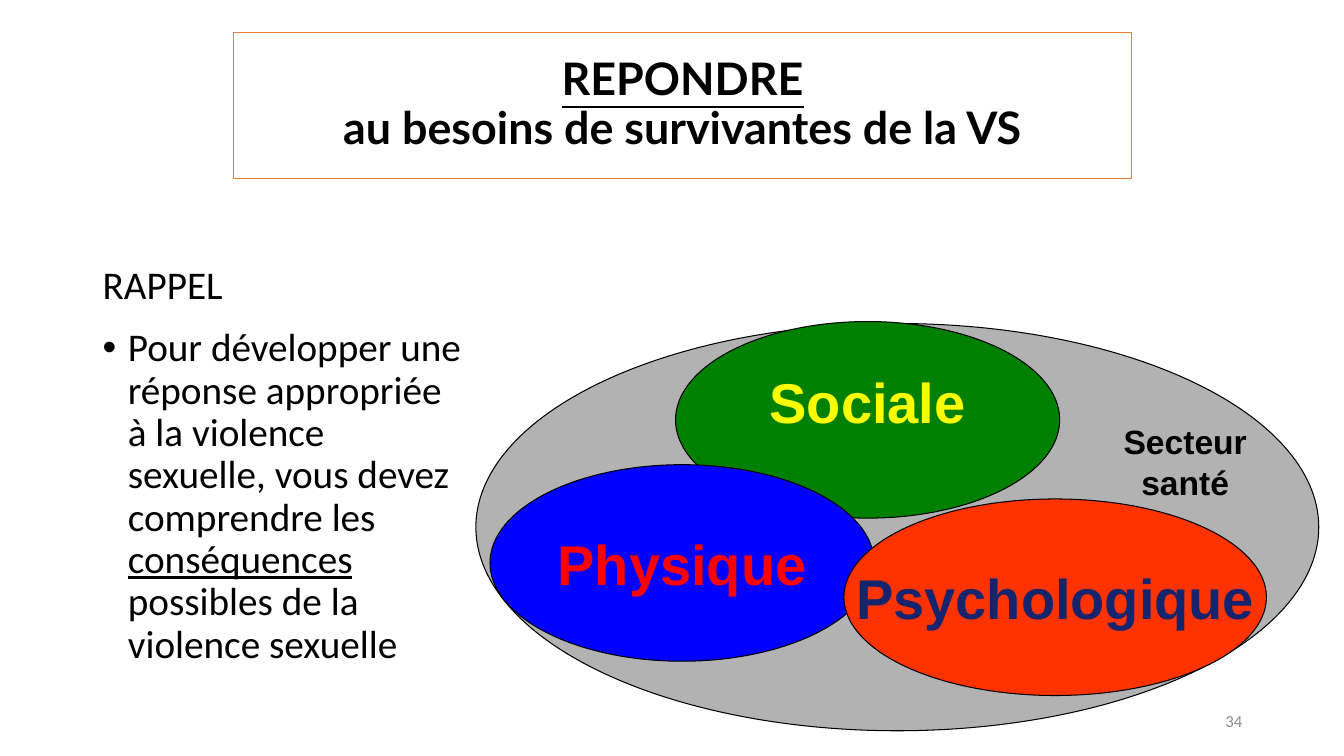
from copy import deepcopy
from dataclasses import dataclass

from lxml.etree import SubElement
from pptx import Presentation
from pptx.dml.color import RGBColor
from pptx.enum.shapes import MSO_SHAPE
from pptx.enum.text import MSO_ANCHOR, MSO_AUTO_SIZE, PP_ALIGN
from pptx.oxml.ns import qn
from pptx.shapes.autoshape import Shape
from pptx.slide import Slide
from pptx.text.text import TextFrame, _Paragraph
from pptx.util import Inches, Pt

COLORS = {
    "black": "000000",
    "orange": "ED7D31",
    "gray": "B2B2B2",
    "green": "008000",
    "yellow": "FFFF00",
    "blue": "0000FF",
    "red": "FF0000",
    "vermilion": "FF3300",
    "navy": "16246D",
    "page gray": "8C8C8C",
}


@dataclass
class Run:
    text: str
    underline: bool = False
    break_after: bool = False


@dataclass
class Need:
    label: str
    left: float
    top: float
    width: float
    fill: str
    color: str
    bottom_margin: float = 0.05


NEEDS = [
    Need("Sociale", 6.7, 3.19, 3.81, "green", "yellow", bottom_margin=0.43),
    Need("Physique", 4.86, 4.61, 3.81, "blue", "red"),
    Need("Psychologique", 8.37, 4.95, 4.19, "vermilion", "navy"),
]
NEED_HEIGHT = 1.95


def rgb(name: str) -> RGBColor:
    return RGBColor.from_string(COLORS[name])


def write(paragraph: _Paragraph, *runs: Run, size: float, font: str = "Calibri",
          color: str = "black", bold: bool = False, align: PP_ALIGN = PP_ALIGN.LEFT,
          line_spacing: float = 1.0, space_before: float = 0) -> None:
    paragraph.alignment = align
    paragraph.line_spacing = line_spacing
    paragraph.space_before = Pt(space_before)
    for part in runs:
        run = paragraph.add_run()
        run.text = part.text
        run.font.name = font
        run.font.size = Pt(size)
        run.font.bold = bold
        run.font.underline = part.underline
        run.font.color.rgb = rgb(color)
        if part.break_after:
            line_break = SubElement(paragraph._p, qn("a:br"))
            line_break.append(deepcopy(run._r.rPr))


def add_bullet(paragraph: _Paragraph, indent: float) -> None:
    properties = paragraph._p.get_or_add_pPr()
    properties.set("marL", str(Inches(indent)))
    properties.set("indent", str(-Inches(indent)))
    SubElement(properties, qn("a:buFont")).set("typeface", "Arial")
    SubElement(properties, qn("a:buChar")).set("char", "•")


def add_text_box(slide: Slide, left: float, top: float, width: float, height: float,
                 anchor: MSO_ANCHOR = MSO_ANCHOR.TOP) -> TextFrame:
    box = slide.shapes.add_textbox(Inches(left), Inches(top), Inches(width), Inches(height))
    box.text_frame.word_wrap = True
    box.text_frame.vertical_anchor = anchor
    return box.text_frame


def add_ellipse(slide: Slide, left: float, top: float, width: float, height: float,
                fill: str) -> Shape:
    ellipse = slide.shapes.add_shape(
        MSO_SHAPE.OVAL, Inches(left), Inches(top), Inches(width), Inches(height))
    ellipse.shadow.inherit = False
    ellipse.fill.solid()
    ellipse.fill.fore_color.rgb = rgb(fill)
    ellipse.line.color.rgb = rgb("black")
    ellipse.line.width = Pt(0.75)
    return ellipse


def add_title(slide: Slide) -> None:
    title = slide.shapes.title
    title.left, title.top = Inches(2.32), Inches(0.32)
    title.width, title.height = Inches(8.9), Inches(1.45)
    title.line.color.rgb = rgb("orange")
    title.line.width = Pt(0.75)
    frame = title.text_frame
    frame.auto_size = MSO_AUTO_SIZE.NONE
    frame.vertical_anchor = MSO_ANCHOR.MIDDLE
    write(frame.paragraphs[0], Run("REPONDRE", underline=True, break_after=True),
          Run("au besoins de survivantes de la VS"), size=32, font="Lato", bold=True,
          align=PP_ALIGN.CENTER, line_spacing=0.9)


def add_reminder(slide: Slide) -> None:
    frame = add_text_box(slide, 0.92, 2.59, 3.8, 4.17)
    write(frame.paragraphs[0], Run("RAPPEL"), size=28, line_spacing=0.9)
    paragraph = frame.add_paragraph()
    add_bullet(paragraph, 0.25)
    write(paragraph,
          Run("Pour développer une réponse appropriée à la violence sexuelle, "
              "vous devez comprendre les "),
          Run("conséquences", underline=True),
          Run(" possibles de la violence sexuelle"),
          size=28, line_spacing=0.9, space_before=14)


def add_need(slide: Slide, need: Need) -> None:
    ellipse = add_ellipse(slide, need.left, need.top, need.width, NEED_HEIGHT, need.fill)
    frame = ellipse.text_frame
    frame.word_wrap = False
    frame.vertical_anchor = MSO_ANCHOR.MIDDLE
    frame.margin_bottom = Inches(need.bottom_margin)
    write(frame.paragraphs[0], Run(need.label), size=40, font="Arial",
          color=need.color, bold=True, align=PP_ALIGN.CENTER)


def add_health_sector(slide: Slide) -> None:
    add_ellipse(slide, 4.72, 3.21, 8.36, 4.04, "gray")
    label = add_text_box(slide, 10.95, 4.13, 1.61, 0.91)
    write(label.paragraphs[0], Run("Secteur santé"), size=24, font="Arial", bold=True,
          align=PP_ALIGN.CENTER)
    for need in NEEDS:
        add_need(slide, need)


def main() -> None:
    presentation = Presentation()
    presentation.slide_width = Inches(13.33)
    presentation.slide_height = Inches(7.5)
    slide = presentation.slides.add_slide(presentation.slide_layouts[5])
    add_title(slide)
    add_reminder(slide)
    add_health_sector(slide)
    page_number = add_text_box(slide, 9.42, 6.95, 3, 0.4, anchor=MSO_ANCHOR.MIDDLE)
    write(page_number.paragraphs[0], Run("34"), size=12, color="page gray",
          align=PP_ALIGN.RIGHT)
    presentation.save("out.pptx")


if __name__ == "__main__":
    main()
